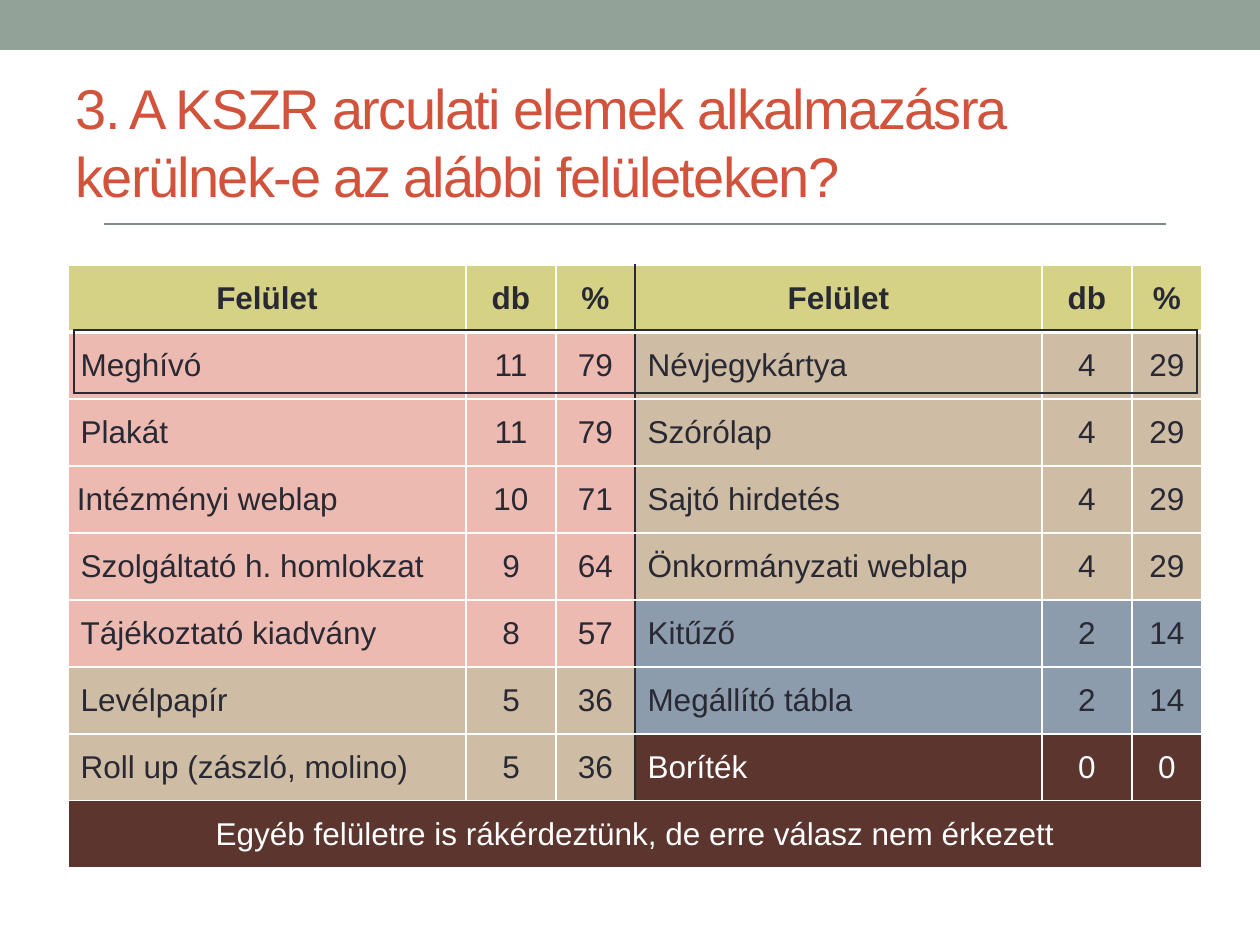
"""Builds the slide on where the KSZR identity elements are used."""
from lxml import etree
from pptx import Presentation
from pptx.dml.color import RGBColor
from pptx.enum.shapes import MSO_CONNECTOR, MSO_SHAPE
from pptx.enum.text import MSO_ANCHOR, PP_ALIGN
from pptx.oxml.ns import qn
from pptx.util import Pt

RECTANGLE, STRAIGHT = MSO_SHAPE.RECTANGLE, MSO_CONNECTOR.STRAIGHT
MIDDLE, LEFT, CENTER = MSO_ANCHOR.MIDDLE, PP_ALIGN.LEFT, PP_ALIGN.CENTER

TITLE = "3. A KSZR arculati elemek alkalmazásra kerülnek-e az alábbi felületeken?"
HEADINGS = ("Felület", "db", "%")
LEFT_HALF = [
    ("Meghívó", "11", "79", "high"),
    ("Plakát", "11", "79", "high"),
    ("Intézményi weblap", "10", "71", "high"),
    ("Szolgáltató h. homlokzat", "9", "64", "high"),
    ("Tájékoztató kiadvány", "8", "57", "high"),
    ("Levélpapír", "5", "36", "medium"),
    ("Roll up (zászló, molino)", "5", "36", "medium"),
]
RIGHT_HALF = [
    ("Névjegykártya", "4", "29", "medium"),
    ("Szórólap", "4", "29", "medium"),
    ("Sajtó hirdetés", "4", "29", "medium"),
    ("Önkormányzati weblap", "4", "29", "medium"),
    ("Kitűző", "2", "14", "low"),
    ("Megállító tábla", "2", "14", "low"),
    ("Boríték", "0", "0", "none"),
]
FOOTER = "Egyéb felületre is rákérdeztünk, de erre válasz nem érkezett"
INDENTS = {"Intézményi weblap": 9}

THEME = {
    "font": "Arial", "title_size": 32, "table_size": 18, "title_spacing": -100,
    "band": "93A299", "title": "D2533C", "rule": "7B8E82",
    "dark": "292934", "white": "FFFFFF",
    "heading": "D5D286", "high": "EDBAB1", "medium": "CEBCA4",
    "low": "8C9CAD", "none": "5B352E",
}

COLUMNS = (398, 90, 79, 407, 90, 70)
ROW_HEIGHT = 67
HALF = len(HEADINGS)


def px(value):
    return round(value * 914400 / 126)


def color(name):
    return RGBColor.from_string(THEME[name])


def style_text(frame, size, ink, align, bold=False):
    paragraph = frame.paragraphs[0]
    paragraph.alignment = align
    for span in paragraph.runs:
        span.font.name = THEME["font"]
        span.font.size = Pt(size)
        span.font.bold = bold
        span.font.color.rgb = color(ink)


def set_borders(cell, ink, **changes):
    properties = cell._tc.get_or_add_tcPr()
    for side in "LRTB":
        side_ink, width = changes.get(side, (ink, 1))
        line = etree.SubElement(properties, qn(f"a:ln{side}"), w=str(Pt(width)))
        fill = etree.SubElement(line, qn("a:solidFill"))
        etree.SubElement(fill, qn("a:srgbClr"), val=THEME[side_ink])


def add_plain_table(page, left, top, columns, row_count, row_height):
    table = page.shapes.add_table(
        row_count, len(columns), px(left), px(top),
        px(sum(columns)), px(row_count * row_height)).table
    table.first_row = table.horz_banding = False
    for column, width in zip(table.columns, columns):
        column.width = px(width)
    for row in table.rows:
        row.height = px(row_height)
    return table


def fill_cell(cell, text, tone, align, bold=False):
    cell.fill.solid()
    cell.fill.fore_color.rgb = color(tone)
    cell.vertical_anchor = MIDDLE
    cell.text_frame.text = text
    if text in INDENTS:
        cell.margin_left = px(INDENTS[text])
    ink = "white" if tone == "none" else "dark"
    style_text(cell.text_frame, THEME["table_size"], ink, align, bold)


def add_frame_parts(page):
    band = page.shapes.add_shape(RECTANGLE, 0, 0, px(1260), px(50))
    band.shadow.inherit = False
    band.fill.solid()
    band.fill.fore_color.rgb = color("band")
    band.line.fill.background()

    title = page.shapes.title
    title.left, title.top, title.width, title.height = map(px, (63, 73, 1134, 136))
    title.text_frame.text = TITLE
    title.text_frame.vertical_anchor = MIDDLE
    style_text(title.text_frame, THEME["title_size"], "title", LEFT)
    span = title.text_frame.paragraphs[0].runs[0]
    span.font._element.set("spc", str(THEME["title_spacing"]))

    rule = page.shapes.add_connector(STRAIGHT, px(104), px(224), px(1166), px(224))
    rule.line.color.rgb = color("rule")
    rule.line.width = Pt(1)
    etree.SubElement(rule._element.spPr, qn("a:effectLst"))


def add_results(page):
    heading = (*HEADINGS, "heading")
    rows = [(heading, heading), *zip(LEFT_HALF, RIGHT_HALF)]
    table = add_plain_table(page, 68, 265, COLUMNS, len(rows) + 1, ROW_HEIGHT)
    for row_index, halves in enumerate(rows):
        is_heading = row_index == 0
        for half_index, (*texts, tone) in enumerate(halves):
            for offset, text in enumerate(texts):
                column = half_index * HALF + offset
                changes = {"B": ("white", 3)} if is_heading else {}
                if column == HALF - 1:
                    changes["R"] = ("dark", 1)
                if column == HALF:
                    changes["L"] = ("dark", 1)
                cell = table.cell(row_index, column)
                set_borders(cell, "white", **changes)
                align = CENTER if is_heading or offset else LEFT
                fill_cell(cell, text, tone, align, is_heading)

    last = len(rows)
    footer = table.cell(last, 0)
    footer.merge(table.cell(last, len(COLUMNS) - 1))
    for cell in table.rows[last].cells:
        set_borders(cell, "white")
    fill_cell(footer, FOOTER, "none", CENTER)


def add_highlight(page):
    cell = add_plain_table(page, 74, 330, (1123,), 1, 63).cell(0, 0)
    set_borders(cell, "dark")
    cell.fill.background()


def main():
    deck = Presentation()
    deck.slide_width, deck.slide_height = px(1260), px(945)
    page = deck.slides.add_slide(deck.slide_layouts[5])
    add_frame_parts(page)
    add_results(page)
    add_highlight(page)
    deck.save("out.pptx")


if __name__ == "__main__":
    main()
